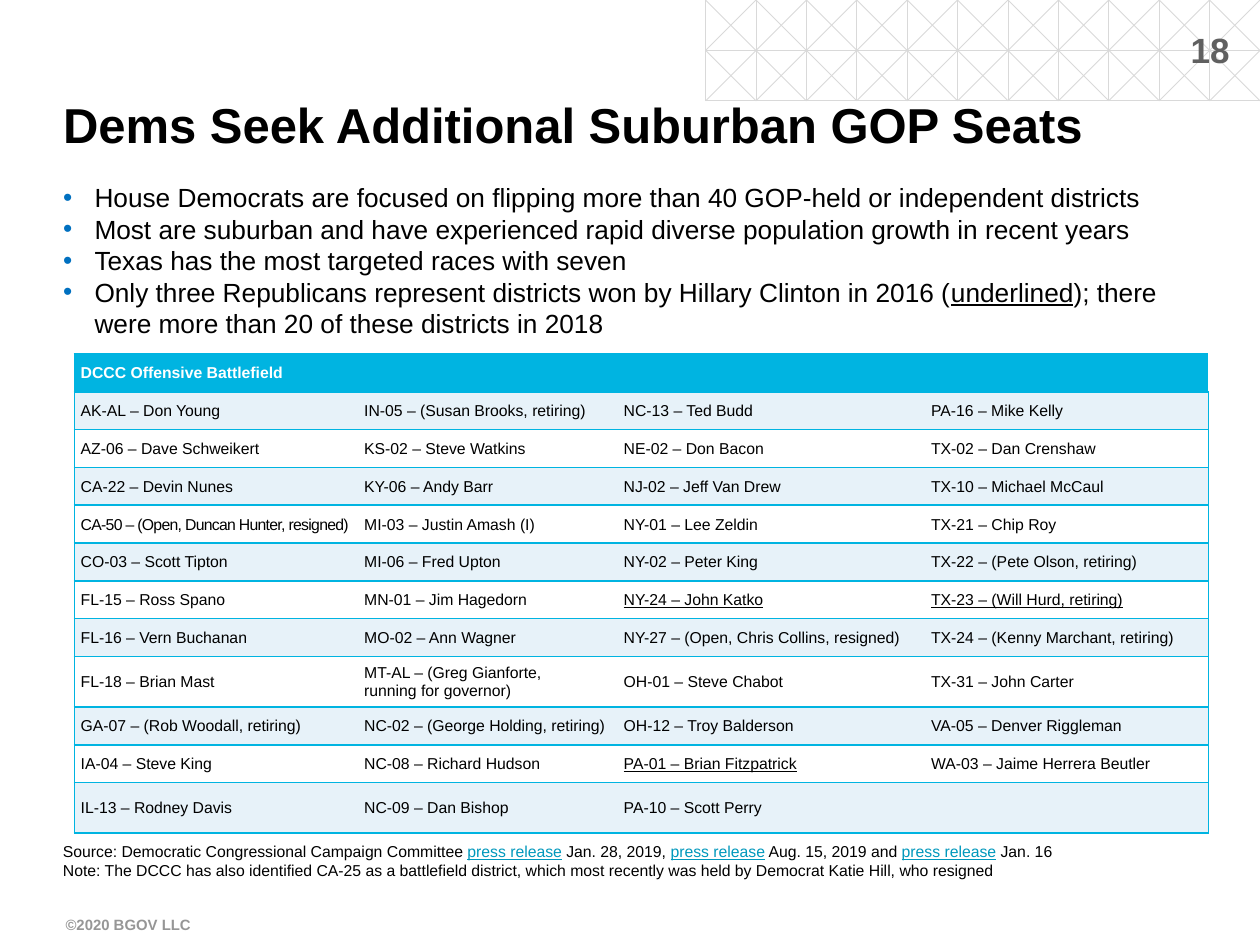
from lxml import etree
from pptx import Presentation
from pptx.dml.color import RGBColor
from pptx.enum.shapes import MSO_CONNECTOR
from pptx.enum.text import MSO_ANCHOR, PP_ALIGN
from pptx.oxml.ns import qn
from pptx.util import Pt

PX = 9144
LINE = MSO_CONNECTOR.STRAIGHT
TOP, MIDDLE, BOTTOM = MSO_ANCHOR.TOP, MSO_ANCHOR.MIDDLE, MSO_ANCHOR.BOTTOM
LEFT, CENTER = PP_ALIGN.LEFT, PP_ALIGN.CENTER
BLACK, WHITE, CYAN, PALE, LINK = "000000", "FFFFFF", "00B4E1", "E7F2F9", "0098BC"

POINTS = [
    [("House Democrats are focused on flipping more than 40 GOP-held or independent districts", {})],
    [("Most are suburban and have experienced rapid diverse population growth in recent years", {})],
    [("Texas has the most targeted races with seven", {})],
    [("Only three Republicans represent districts won by Hillary Clinton in 2016 (", {}),
     ("underlined", {"under": True}),
     ("); there were more than 20 of these districts in 2018", {})],
]
PRESS = ("press release", {"color": LINK, "under": True})
NOTES = [
    [("Source: Democratic Congressional Campaign Committee ", {}), PRESS,
     (" Jan. 28, 2019, ", {}), PRESS, (" Aug. 15, 2019 and ", {}), PRESS, (" Jan. 16", {})],
    [("Note: The DCCC has also identified CA-25 as a battlefield district, "
      "which most recently was held by Democrat Katie Hill, who resigned", {})],
]
SEATS = [
    ["AK-AL – Don Young", "IN-05 – (Susan Brooks, retiring)", "NC-13 – Ted Budd", "PA-16 – Mike Kelly"],
    ["AZ-06 – Dave Schweikert", "KS-02 – Steve Watkins", "NE-02 – Don Bacon", "TX-02 – Dan Crenshaw"],
    ["CA-22 – Devin Nunes", "KY-06 – Andy Barr", "NJ-02 – Jeff Van Drew", "TX-10 – Michael McCaul"],
    ["CA-50 – (Open, Duncan Hunter, resigned)", "MI-03 – Justin Amash (I)",
     "NY-01 – Lee Zeldin", "TX-21 – Chip Roy"],
    ["CO-03 – Scott Tipton", "MI-06 – Fred Upton", "NY-02 – Peter King", "TX-22 – (Pete Olson, retiring)"],
    ["FL-15 – Ross Spano", "MN-01 – Jim Hagedorn", "NY-24 – John Katko", "TX-23 – (Will Hurd, retiring)"],
    ["FL-16 – Vern Buchanan", "MO-02 – Ann Wagner",
     "NY-27 – (Open, Chris Collins, resigned)", "TX-24 – (Kenny Marchant, retiring)"],
    ["FL-18 – Brian Mast", "MT-AL – (Greg Gianforte, \nrunning for governor)",
     "OH-01 – Steve Chabot", "TX-31 – John Carter"],
    ["GA-07 – (Rob Woodall, retiring)", "NC-02 – (George Holding, retiring)",
     "OH-12 – Troy Balderson", "VA-05 – Denver Riggleman"],
    ["IA-04 – Steve King", "NC-08 – Richard Hudson", "PA-01 – Brian Fitzpatrick",
     "WA-03 – Jaime Herrera Beutler"],
    ["IL-13 – Rodney Davis", "NC-09 – Dan Bishop", "PA-10 – Scott Perry", ""],
]
CLINTON = {"NY-24", "TX-23", "PA-01"}
TIGHT = {"CA-50"}


def rgb(code):
    """Turn a hex string into a colour."""
    return RGBColor.from_string(code)


def put(para, text, size, color=BLACK, bold=False, under=False, space=0):
    """Add text to a paragraph, with a line break at each newline."""
    for n, part in enumerate(text.split("\n")):
        if n:
            para.add_line_break()
        run = para.add_run()
        run.text = part
        font = run.font
        font.name, font.size, font.bold, font.underline = "Arial", Pt(size), bold, under
        font.color.rgb = rgb(color)
        if space:
            run._r.get_or_add_rPr().set("spc", str(space))


def frame(shape, pad, anchor=TOP):
    """Set the margins (left, top, right, bottom) and anchor of a text frame."""
    body = shape.text_frame
    body.word_wrap = True
    body.vertical_anchor = anchor
    body.margin_left, body.margin_top, body.margin_right, body.margin_bottom = [p * PX for p in pad]
    return body


def text_box(slide, box, pad, anchor=TOP):
    """Add a text box and return its frame."""
    return frame(slide.shapes.add_textbox(*[v * PX for v in box]), pad, anchor)


def fill_text(body, paras, size, dot=False):
    """Write paragraphs of styled runs, bulleted if asked."""
    for n, runs in enumerate(paras):
        para = body.add_paragraph() if n else body.paragraphs[0]
        if dot:
            bullet(para)
        for text, style in runs:
            put(para, text, size, **style)


def bullet(para):
    """Give a paragraph a blue bullet and a hanging indent."""
    props = para._p.get_or_add_pPr()
    props.set("marL", str(25 * PX))
    props.set("indent", str(-25 * PX))
    tint = etree.SubElement(props, qn("a:buClr"))
    etree.SubElement(tint, qn("a:srgbClr")).set("val", "0070C0")
    etree.SubElement(props, qn("a:buFont")).set("typeface", "Arial")
    etree.SubElement(props, qn("a:buChar")).set("char", "•")


def lattice(slide, left, top, step, cols, rows):
    """Draw a grid crossed by diagonals that each span two cells."""
    lines = [(0, y, cols, y) for y in range(1, rows + 1)]
    lines += [(x, 0, x, rows) for x in range(cols)]
    for i in range(-1, cols):
        a, b = max(i, 0), min(i + rows, cols)
        lines += [(a, a - i, b, b - i), (a, rows - a + i, b, rows - b + i)]
    for x1, y1, x2, y2 in lines:
        ends = left + x1 * step, top + y1 * step, left + x2 * step, top + y2 * step
        line = slide.shapes.add_connector(LINE, *[v * PX for v in ends])
        line.line.color.rgb = rgb("D9D9D9")
        line.line.width = Pt(0.5)
        etree.SubElement(line._element.spPr, qn("a:effectLst"))


def edge(cell, sides):
    """Draw cyan borders on the named sides and clear the others."""
    props = cell._tc.get_or_add_tcPr()
    for side in "LRTB":
        line = etree.SubElement(props, qn("a:ln" + side))
        line.set("w", str(Pt(1)))
        if side in sides:
            paint = etree.SubElement(line, qn("a:solidFill"))
            etree.SubElement(paint, qn("a:srgbClr")).set("val", CYAN)
        else:
            etree.SubElement(line, qn("a:noFill"))


def seat_table(slide, left, top, widths, heights):
    """Place the table of targeted seats."""
    box = left, top, sum(widths), sum(heights)
    grid = slide.shapes.add_table(len(heights), len(widths), *[v * PX for v in box]).table
    for col, width in zip(grid.columns, widths):
        col.width = width * PX
    for row, height in zip(grid.rows, heights):
        row.height = height * PX
    last = len(widths) - 1
    data = [["DCCC Offensive Battlefield"] + [""] * last] + SEATS
    for r, names in enumerate(data):
        for c, name in enumerate(names):
            cell = grid.cell(r, c)
            edge(cell, "TB" + "L" * (c == 0) + "R" * (c == last))
            cell.fill.solid()
            cell.fill.fore_color.rgb = rgb(CYAN if r == 0 else PALE if r % 2 else WHITE)
            cell.vertical_anchor = MIDDLE
            cell.margin_left = cell.margin_right = cell.margin_top = cell.margin_bottom = 5 * PX
            para = cell.text_frame.paragraphs[0]
            if r and "\n" not in name:
                para.line_spacing = 1.07
            if name:
                code = name[:5]
                put(para, name, 9, BLACK if r else WHITE, r == 0,
                    code in CLINTON, -40 if code in TIGHT else 0)
    grid.cell(0, 0).merge(grid.cell(0, last))


def heading(slide, box):
    """Move and format the title."""
    title = slide.shapes.title
    title.left, title.top, title.width, title.height = [v * PX for v in box]
    para = frame(title, (0, 0, 0, 0)).paragraphs[0]
    para.alignment = LEFT
    put(para, "Dems Seek Additional Suburban GOP Seats", 28, bold=True)


def main():
    """Build the slide and save it."""
    deck = Presentation()
    deck.slide_width, deck.slide_height = 1000 * PX, 750 * PX
    slide = deck.slides.add_slide(deck.slide_layouts[5])
    lattice(slide, 560, 0, 40, 11, 2)
    page = text_box(slide, (934, 20, 53, 38), (0, 0, 0, 0), MIDDLE)
    page.paragraphs[0].alignment = CENTER
    fill_text(page, [[("18", {"color": "606060", "bold": True})]], 20)
    foot = text_box(slide, (52, 722, 221, 38), (0, 5, 0, 5))
    fill_text(foot, [[("©2020 BGOV LLC", {"color": "969696", "bold": True})]], 8.5)
    heading(slide, (50, 75, 900, 47))
    fill_text(text_box(slide, (50, 659, 900, 39), (0, 5, 0, 0), BOTTOM), NOTES, 9)
    fill_text(text_box(slide, (50, 139, 918, 142), (0, 5, 0, 5)), POINTS, 15, True)
    seat_table(slide, 59, 281, [225, 206, 244, 225], [30] * 8 + [38] + [30] * 3)
    deck.save("out.pptx")


if __name__ == "__main__":
    main()
